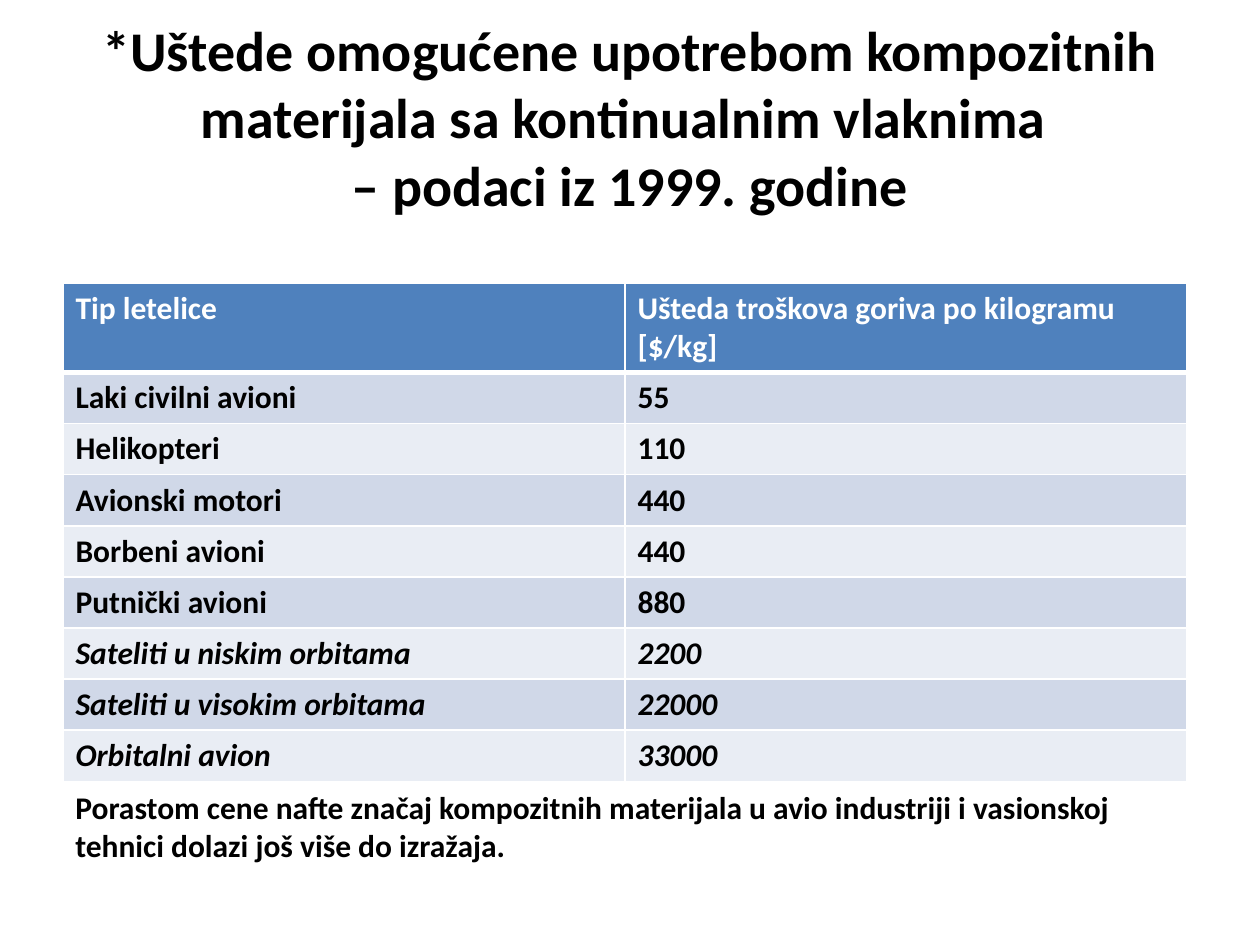
from dataclasses import dataclass

from lxml.etree import SubElement
from pptx import Presentation
from pptx.dml.color import RGBColor
from pptx.enum.text import MSO_ANCHOR, MSO_AUTO_SIZE, PP_ALIGN
from pptx.oxml.ns import qn
from pptx.util import Emu, Pt

PX = 914400 / 126


@dataclass(frozen=True)
class Theme:
    font: str = "Calibri"
    title_size: int = 32
    text_size: int = 18
    ink: str = "000000"
    paper: str = "FFFFFF"
    header: str = "4F81BD"
    bands: tuple = ("D0D8E8", "E9EDF4")
    thin: int = 1
    thick: int = 3


THEME = Theme()

TITLE = ("*Uštede omogućene upotrebom kompozitnih materijala "
         "sa kontinualnim vlaknima \v– podaci iz 1999. godine")
HEADINGS = ("Tip letelice", "Ušteda troškova goriva po kilogramu [$/kg]")
AIRCRAFT = [
    ("Laki civilni avioni", "55"),
    ("Helikopteri", "110"),
    ("Avionski motori", "440"),
    ("Borbeni avioni", "440"),
    ("Putnički avioni", "880"),
]
SPACECRAFT = [
    ("Sateliti u niskim orbitama", "2200"),
    ("Sateliti u visokim orbitama", "22000"),
    ("Orbitalni avion", "33000"),
]
CONCLUSION = ("Porastom cene nafte značaj kompozitnih materijala u avio industriji "
              "i vasionskoj tehnici dolazi još više do izražaja.")


def px(length):
    return Emu(round(length * PX))


def place(shape, left, top, width, height):
    shape.left, shape.top = px(left), px(top)
    shape.width, shape.height = px(width), px(height)


def write(frame, text, size, color, italic=False):
    """Fill a text frame with one bold paragraph and return it."""
    frame.word_wrap = True
    para = frame.paragraphs[0]
    para.text = text
    font = para.font
    font.name, font.size = THEME.font, Pt(size)
    font.bold, font.italic = True, italic
    font.color.rgb = RGBColor.from_string(color)
    return para


def add_title(page):
    title = page.shapes.title
    place(title, 63, 38, 1134, 157)
    frame = title.text_frame
    frame.vertical_anchor = MSO_ANCHOR.MIDDLE
    para = write(frame, TITLE, THEME.title_size, THEME.ink)
    para.alignment = PP_ALIGN.CENTER
    frame.auto_size = MSO_AUTO_SIZE.NONE


def set_borders(cell, top, bottom):
    """Draw the four cell borders; top and bottom are widths in points."""
    properties = cell._tc.get_or_add_tcPr()
    widths = {"lnL": THEME.thin, "lnR": THEME.thin, "lnT": top, "lnB": bottom}
    for side, width in widths.items():
        line = SubElement(properties, qn(f"a:{side}"), w=str(Pt(width)))
        fill = SubElement(line, qn("a:solidFill"))
        SubElement(fill, qn("a:srgbClr"), val=THEME.paper)


def fill_row(cells, texts, background, color, italic=False,
             top=THEME.thin, bottom=THEME.thin):
    for cell, text in zip(cells, texts):
        set_borders(cell, top, bottom)
        cell.fill.solid()
        cell.fill.fore_color.rgb = RGBColor.from_string(background)
        write(cell.text_frame, text, THEME.text_size, color, italic)


def add_savings_table(page):
    records = AIRCRAFT + SPACECRAFT
    header_height, row_height, column_width = 88, 51, 562
    height = header_height + row_height * len(records)
    table = page.shapes.add_table(
        len(records) + 1, len(HEADINGS), px(63), px(283),
        px(column_width * len(HEADINGS)), px(height)).table
    for column in table.columns:
        column.width = px(column_width)
    for row in table.rows:
        row.height = px(row_height)
    table.rows[0].height = px(header_height)

    fill_row(table.rows[0].cells, HEADINGS, THEME.header, THEME.paper,
             bottom=THEME.thick)
    for index, record in enumerate(records):
        fill_row(table.rows[index + 1].cells, record, THEME.bands[index % 2],
                 THEME.ink, italic=record in SPACECRAFT,
                 top=THEME.thin if index else THEME.thick)


def add_conclusion(page):
    box = page.shapes.add_textbox(px(63), px(782), px(1124), px(89))
    write(box.text_frame, CONCLUSION, THEME.text_size, THEME.ink)
    box.text_frame.auto_size = MSO_AUTO_SIZE.SHAPE_TO_FIT_TEXT


def main():
    deck = Presentation()
    deck.slide_width, deck.slide_height = px(1260), px(945)
    page = deck.slides.add_slide(deck.slide_layouts.get_by_name("Title Only"))
    add_title(page)
    add_savings_table(page)
    add_conclusion(page)
    deck.save("out.pptx")


if __name__ == "__main__":
    main()
